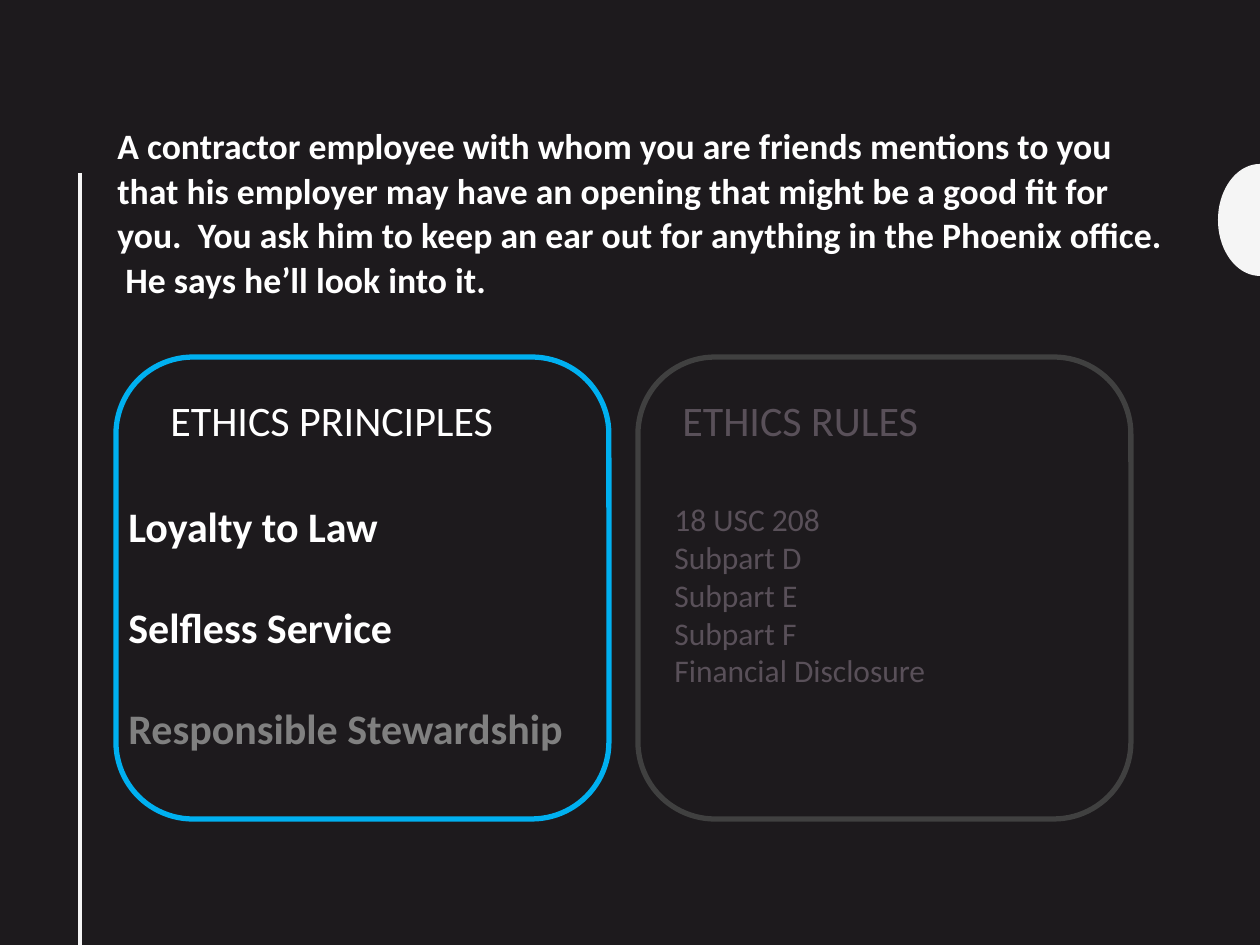
import math
from lxml import etree
from pptx import Presentation
from pptx import util as u
from pptx.dml import color
from pptx.enum import shapes, text
from pptx.oxml import ns

HUES = {
    "back": "1D1A1D",
    "trim": "F5F5F5",
    "white": "FFFFFF",
    "blue": "00B0F0",
    "edge": "404040",
    "dim": "595059",
    "gray": "808080",
}


def px(n):
    return u.Emu(round(n * 914400 / 126))


def hue(name):
    return color.RGBColor.from_string(HUES[name])


class Page:
    font = "Calibri"

    def __init__(self, deck):
        self.slide = deck.slides.add_slide(deck.slide_layouts[6])
        self.items = self.slide.shapes
        fill = self.slide.background.fill
        fill.solid()
        fill.fore_color.rgb = hue("back")

    def dome(self, x, y, wide, high, tone):
        turns = [math.pi * i / 36 for i in range(37)]
        dots = [(px(x - wide * math.sin(t)), px(y - high * math.cos(t))) for t in turns]
        pen = self.items.build_freeform(*dots[0])
        pen.add_line_segments(dots[1:], close=True)
        shape = pen.convert_to_shape()
        shape.shadow.inherit = False
        shape.fill.solid()
        shape.fill.fore_color.rgb = hue(tone)
        shape.line.fill.background()

    def rule(self, x, top, end, tone, size):
        line = self.items.add_connector(
            shapes.MSO_CONNECTOR.STRAIGHT, px(x), px(top), px(x), px(end))
        line.line.color.rgb = hue(tone)
        line.line.width = u.Pt(size)
        etree.SubElement(line._element.spPr, ns.qn("a:effectLst"))

    def frame(self, x, y, w, h, tone):
        shape = self.items.add_shape(
            shapes.MSO_SHAPE.ROUNDED_RECTANGLE, px(x), px(y), px(w), px(h))
        shape.shadow.inherit = False
        shape.fill.background()
        shape.line.color.rgb = hue(tone)
        shape.line.width = u.Pt(3)

    def words(self, x, y, w, h, rows, size, bold=False, gap=0, pitch=None):
        frame = self.items.add_textbox(px(x), px(y), px(w), px(h)).text_frame
        frame.word_wrap = True
        frame.vertical_anchor = text.MSO_ANCHOR.TOP
        for i, (row, tone) in enumerate(rows):
            para = frame.add_paragraph() if i else frame.paragraphs[0]
            para.text = row
            para.font.name = self.font
            para.font.size = u.Pt(size)
            para.font.bold = bold
            para.font.color.rgb = hue(tone)
            if i:
                para.space_before = u.Pt(gap)
            if pitch:
                para.line_spacing = pitch


def main():
    deck = Presentation()
    deck.slide_width, deck.slide_height = px(1260), px(945)
    page = Page(deck)
    page.dome(1260, 220, 42, 56, "trim")
    page.rule(80, 173, 945, "trim", 2)

    panels = [
        ("ETHICS PRINCIPLES", 158, "white", 116, "blue"),
        ("ETHICS RULES", 670, "dim", 638, "edge"),
    ]
    for head, left, tone, x, edge in panels:
        page.words(left, 388, 455, 63, [(head, tone)], 24)
        page.frame(x, 357, 493, 462, edge)

    values = [
        ("Loyalty to Law", "white"),
        ("Selfless Service", "white"),
        ("Responsible Stewardship", "gray"),
    ]
    page.words(116, 494, 484, 267, values, 24, bold=True, gap=29)

    rules = ["18 USC 208", "Subpart D", "Subpart E", "Subpart F", "Financial Disclosure"]
    page.words(662, 494, 598, 204, [(rule, "dim") for rule in rules], 18)

    story = (
        "A contractor employee with whom you are friends mentions to you that his "
        "employer may have an opening that might be a good fit for you.  You ask him "
        "to keep an ear out for anything in the Phoenix office.  He says he’ll look into it."
    )
    page.words(105, 116, 1071, 228, [(story, "white")], 20.4, bold=True, pitch=1.04)
    deck.save("out.pptx")


if __name__ == "__main__":
    main()
